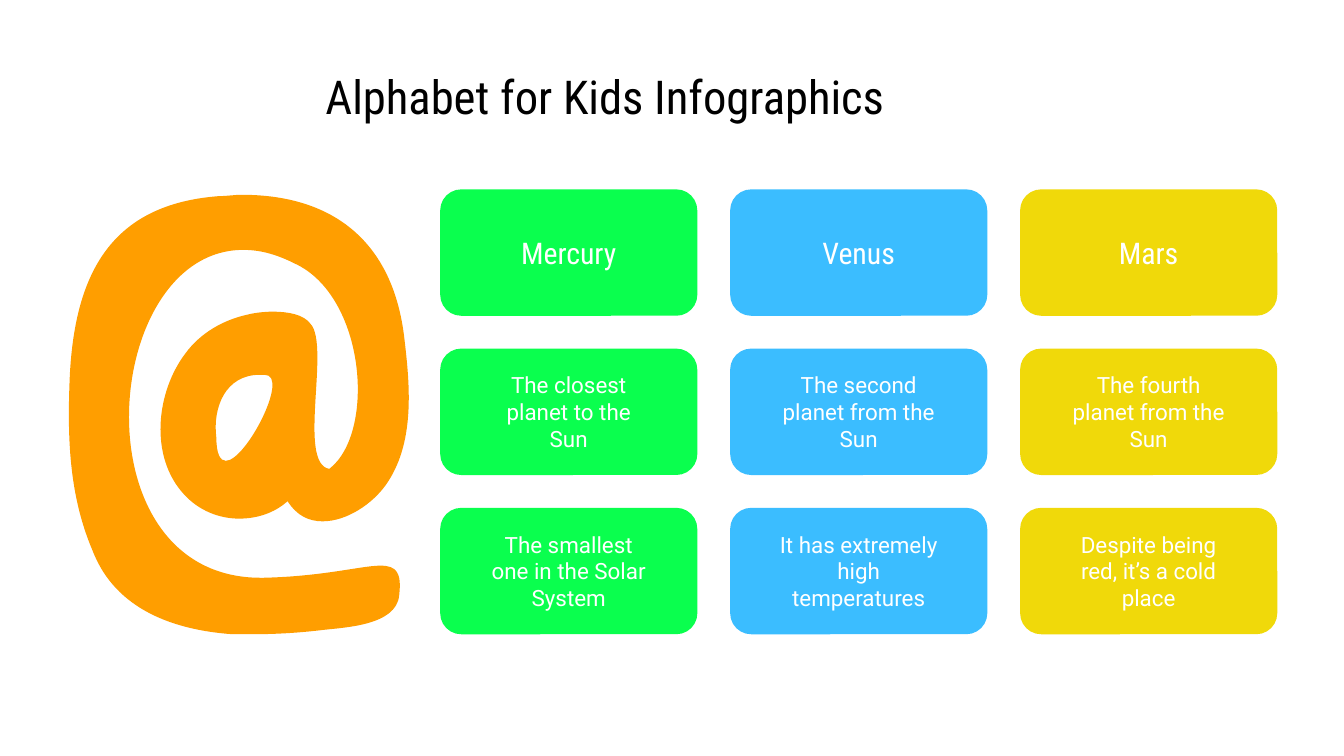
from lxml import etree
from pptx import Presentation
from pptx.dml.color import RGBColor
from pptx.enum.shapes import MSO_SHAPE
from pptx.enum.text import MSO_ANCHOR, PP_ALIGN
from pptx.oxml.ns import qn
from pptx.util import Cm, Pt

ROUND = MSO_SHAPE.ROUNDED_RECTANGLE
MIDDLE = MSO_ANCHOR.MIDDLE
CENTER = PP_ALIGN.CENTER

# Content
TITLE = "Alphabet for Kids Infographics"
PLANETS = [
    ("green", ["Mercury", "The closest planet to the Sun",
               "The smallest one in the Solar System"]),
    ("blue", ["Venus", "The second planet from the Sun",
              "It has extremely high temperatures"]),
    ("yellow", ["Mars", "The fourth planet from the Sun",
                "Despite being red, it’s a cold place"]),
]
COLORS = {"green": "0AFF4E", "blue": "3BBDFF", "yellow": "F0D90A",
          "orange": "FF9E00", "white": "FFFFFF", "black": "000000"}
HEAD = ("Roboto Condensed", 16, 0.25)  # font, size, inset in cm
BODY = ("Roboto", 12, 0.76)

# At sign: each contour is a start point, then three points per curve
UNIT = Cm(2.54)
HOLE = [
    (1.93, 2.79),
    (1.94, 2.79), (1.96, 2.79), (1.97, 2.79),
    (2.16, 2.79), (1.83, 3.43), (1.68, 3.43),
    (1.64, 3.43), (1.61, 3.38), (1.61, 3.26),
    (1.58, 3.03), (1.68, 2.79), (1.93, 2.79),
]
STROKE = [
    (1.8, 1.45),
    (1.74, 1.45), (1.69, 1.46), (1.63, 1.46),
    (0.83, 1.52), (0.56, 2.03), (0.52, 2.79),
    (0.5, 3.24), (0.51, 3.68), (0.69, 4.1),
    (0.86, 4.54), (1.3, 4.69), (1.73, 4.72),
    (1.78, 4.72), (1.83, 4.72), (1.88, 4.72),
    (2.05, 4.72), (2.22, 4.71), (2.39, 4.69),
    (2.55, 4.67), (2.95, 4.66), (2.97, 4.43),
    (2.99, 4.26), (2.95, 4.21), (2.83, 4.21),
    (2.69, 4.21), (2.41, 4.29), (1.96, 4.3),
    (1.95, 4.3), (1.95, 4.3), (1.94, 4.3),
    (0.56, 4.3), (0.75, 1.86), (1.81, 1.86),
    (1.93, 1.86), (2.05, 1.89), (2.19, 1.96),
    (2.72, 2.2), (2.8, 3.22), (2.45, 3.49),
    (2.21, 3.45), (2.46, 2.57), (2.31, 2.41),
    (2.26, 2.34), (2.14, 2.32), (2.03, 2.32),
    (1.96, 2.32), (1.89, 2.33), (1.85, 2.34),
    (1.66, 2.38), (1.49, 2.48), (1.38, 2.63),
    (1.16, 2.92), (1.11, 3.4), (1.37, 3.68),
    (1.48, 3.8), (1.63, 3.86), (1.78, 3.86),
    (1.91, 3.86), (2.04, 3.82), (2.14, 3.73),
    (2.21, 3.84), (2.3, 3.88), (2.4, 3.88),
    (2.58, 3.88), (2.77, 3.75), (2.87, 3.61),
    (3.09, 3.3), (3.05, 2.87), (3.01, 2.53),
    (2.93, 1.8), (2.48, 1.45), (1.8, 1.45),
]

# Card grid in cm
LEFT, TOP = 8.32, 3.58
WIDE, HIGH = 4.86, 2.39
STEP_X, STEP_Y = 5.48, 3.01


def paint(shape, color):
    shape.shadow.inherit = False
    shape.fill.solid()
    shape.fill.fore_color.rgb = RGBColor.from_string(COLORS[color])
    shape.line.fill.background()


def write(shape, text, style, color):
    font, size, inset = style
    frame = shape.text_frame
    frame.word_wrap = True
    frame.vertical_anchor = MIDDLE
    frame.margin_left = frame.margin_right = Cm(inset)
    frame.margin_top = frame.margin_bottom = Cm(inset)
    para = frame.paragraphs[0]
    para.alignment = CENTER
    run = para.add_run()
    run.text = text
    run.font.name = font
    run.font.size = Pt(size)
    run.font.color.rgb = RGBColor.from_string(COLORS[color])


def expand(points):
    """Whole slide units, since the freeform builder rounds its points."""
    return [(round(x * UNIT), round(y * UNIT)) for x, y in points]


def bend(shape):
    """Turn every three straight segments into one Bezier curve."""
    lines = list(shape.element.iter(qn("a:lnTo")))
    for i in range(0, len(lines), 3):
        curve = etree.Element(qn("a:cubicBezTo"))
        lines[i].addprevious(curve)
        for line in lines[i:i + 3]:
            curve.append(line[0])
            line.getparent().remove(line)


deck = Presentation()
deck.slide_width, deck.slide_height = Cm(25.4), Cm(14.29)
slide = deck.slides.add_slide(deck.slide_layouts[6])

# Title
title = slide.shapes.add_textbox(Cm(0), Cm(1.14), Cm(22.86), Cm(1.35))
write(title, TITLE, ("Roboto Condensed", 25, 0.25), "black")

# Planet cards, one group per column
for col, (color, texts) in enumerate(PLANETS):
    group = slide.shapes.add_group_shape()
    for row, text in enumerate(texts):
        card = group.shapes.add_shape(
            ROUND, Cm(LEFT + col * STEP_X), Cm(TOP + row * STEP_Y),
            Cm(WIDE), Cm(HIGH))
        paint(card, color)
        write(card, text, BODY if row else HEAD, "white")

# At sign
hole, stroke = expand(HOLE), expand(STROKE)
pen = slide.shapes.build_freeform(*hole[0])
pen.add_line_segments(hole[1:], close=True)
pen.move_to(*stroke[0])
pen.add_line_segments(stroke[1:], close=True)
sign = pen.convert_to_shape()
bend(sign)
paint(sign, "orange")

deck.save("out.pptx")
